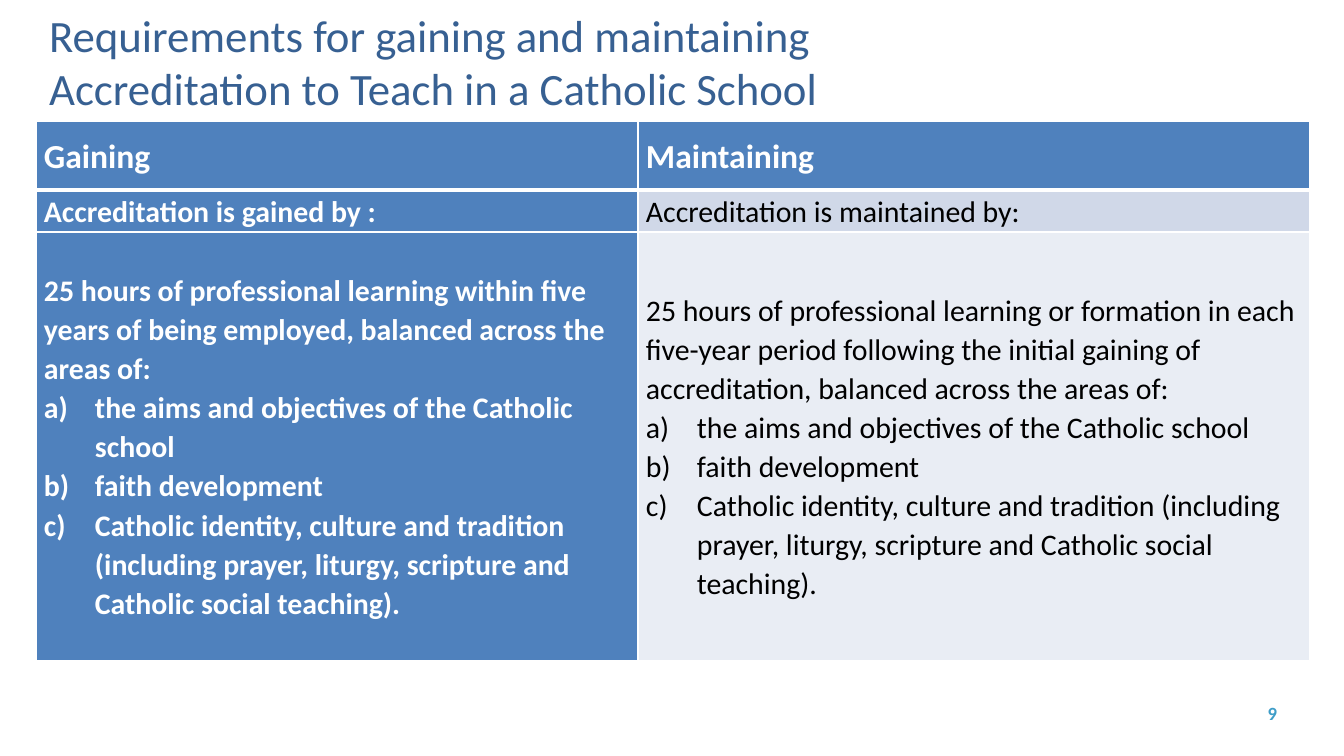
from lxml import etree
from pptx import Presentation
from pptx import util as u
from pptx.dml.color import RGBColor
from pptx.enum import text
from pptx.oxml import ns

SCALE = 914400 / 134.4
FONT = "Calibri"
WHITE, BLACK, BLUE = "FFFFFF", "000000", "4F81BD"
AREAS = [
    "the aims and objectives of the Catholic school",
    "faith development",
    "Catholic identity, culture and tradition (including prayer, liturgy, "
    "scripture and Catholic social teaching).",
]
GAINING = (
    "25 hours of professional learning within five years of being employed, "
    "balanced across the areas of:"
)
MAINTAINING = (
    "25 hours of professional learning or formation in each five-year period "
    "following the initial gaining of accreditation, balanced across the areas of:"
)
ROWS = [
    (69, 18, [(["Gaining"], BLUE, WHITE), (["Maintaining"], BLUE, WHITE)]),
    (42, 16, [(["Accreditation is gained by :"], BLUE, WHITE),
              (["Accreditation is maintained by:"], "D0D8E8", BLACK)]),
    (429, 16, [([GAINING] + AREAS, BLUE, WHITE),
               ([MAINTAINING] + AREAS, "E9EDF4", BLACK)]),
]


def px(length):
    return u.Emu(round(length * SCALE))


def colour(value):
    return RGBColor.from_string(value)


def add_run(para, words, size, ink, bold=False):
    span = para.add_run()
    span.text = words
    span.font.name = FONT
    span.font.size = u.Pt(size)
    span.font.bold = bold
    span.font.color.rgb = colour(ink)


def next_para(frame, index):
    return frame.add_paragraph() if index else frame.paragraphs[0]


def set_margins(target, side):
    target.margin_left = target.margin_right = px(side)
    target.margin_top = target.margin_bottom = 0


def add_letter(para):
    properties = para._p.get_or_add_pPr()
    properties.set("marL", str(px(51)))
    properties.set("indent", str(px(-51)))
    bullet = etree.SubElement(properties, ns.qn("a:buAutoNum"))
    bullet.set("type", "alphaLcParenR")


def add_borders(cell, bottom):
    properties = cell._tc.get_or_add_tcPr()
    for side, width in (("L", 1), ("R", 1), ("T", 1), ("B", bottom)):
        line = etree.SubElement(properties, ns.qn(f"a:ln{side}"), w=str(u.Pt(width)))
        fill = etree.SubElement(line, ns.qn("a:solidFill"))
        etree.SubElement(fill, ns.qn("a:srgbClr"), val=WHITE)


def fill_cell(cell, lines, size, back, ink, bottom):
    add_borders(cell, bottom)
    cell.fill.solid()
    cell.fill.fore_color.rgb = colour(back)
    cell.vertical_anchor = text.MSO_ANCHOR.MIDDLE
    set_margins(cell, 8)
    for index, words in enumerate(lines):
        para = next_para(cell.text_frame, index)
        para.line_spacing = 1.07
        if index:
            add_letter(para)
        add_run(para, words, size, ink, ink == WHITE)


def add_requirements(page, left, top, widths):
    height = sum(row[0] for row in ROWS)
    table = page.shapes.add_table(
        len(ROWS), len(widths), px(left), px(top), px(sum(widths)), px(height)
    ).table
    table.horz_banding = False
    for column, width in zip(table.columns, widths):
        column.width = px(width)
    for index, (row_height, size, cells) in enumerate(ROWS):
        table.rows[index].height = px(row_height)
        for cell, (lines, back, ink) in zip(table.rows[index].cells, cells):
            fill_cell(cell, lines, size, back, ink, 1 if index else 3)


def add_title(page, left, top, width, height):
    box = page.shapes.add_textbox(px(left), px(top), px(width), px(height))
    frame = box.text_frame
    frame.word_wrap = False
    frame.auto_size = text.MSO_AUTO_SIZE.SHAPE_TO_FIT_TEXT
    frame.vertical_anchor = text.MSO_ANCHOR.MIDDLE
    lines = ["Requirements for gaining and maintaining",
             "Accreditation to Teach in a Catholic School"]
    for index, words in enumerate(lines):
        add_run(next_para(frame, index), words, 24, "376092")


def add_page_number(page, left, top, width, height):
    box = page.shapes.add_textbox(px(left), px(top), px(width), px(height))
    frame = box.text_frame
    frame.word_wrap = True
    set_margins(frame, 0)
    para = frame.paragraphs[0]
    para.alignment = text.PP_ALIGN.RIGHT
    add_run(para, "9", 10, "3E9DC8", True)


def main():
    deck = Presentation()
    deck.slide_width, deck.slide_height = px(1344), px(756)
    page = deck.slides.add_slide(deck.slide_layouts[6])
    add_page_number(page, 956, 702, 321, 23)
    add_requirements(page, 36, 121, [602, 672])
    add_title(page, 36, 0, 805, 122)
    deck.save("out.pptx")


if __name__ == "__main__":
    main()
